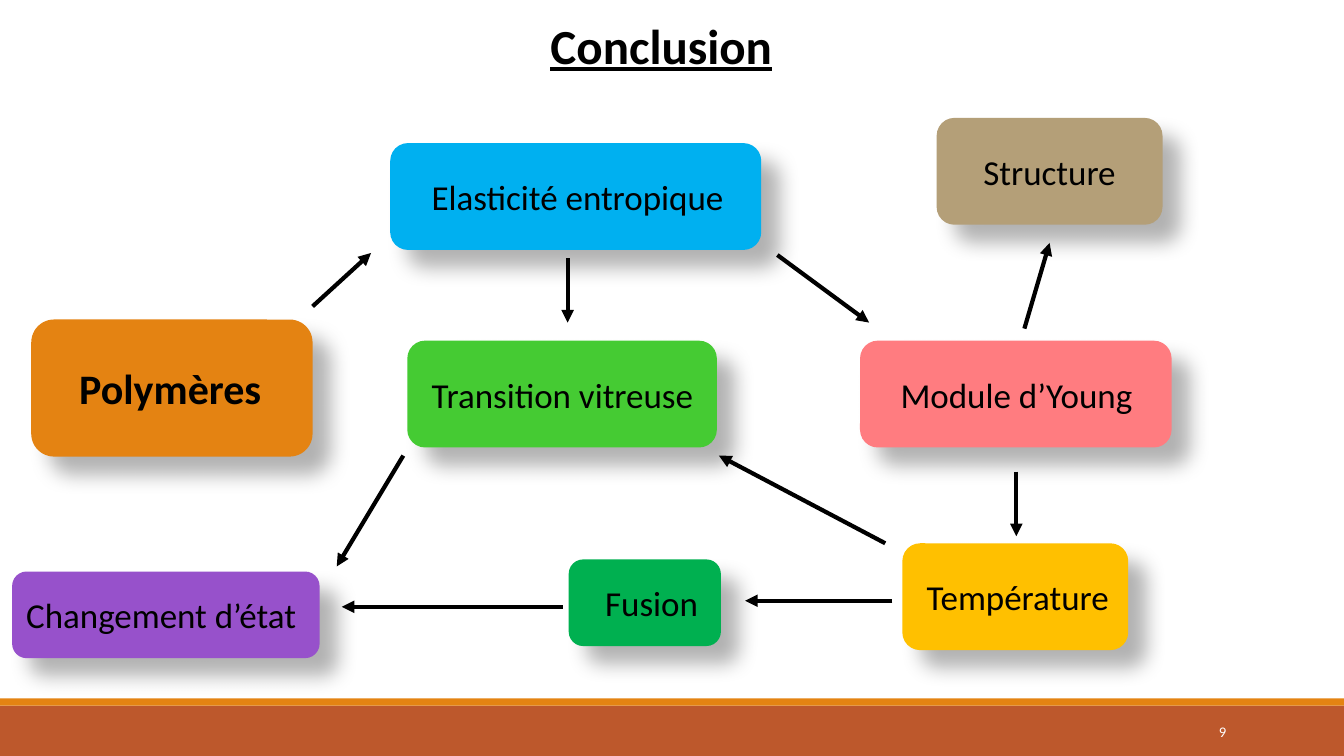
from dataclasses import dataclass

from lxml.etree import SubElement
from pptx import Presentation
from pptx.dml.color import RGBColor
from pptx.enum.shapes import MSO_CONNECTOR, MSO_SHAPE
from pptx.enum.text import MSO_ANCHOR, PP_ALIGN
from pptx.oxml import parse_xml
from pptx.oxml.ns import nsdecls, qn
from pptx.util import Inches, Pt


@dataclass(frozen=True)
class Theme:
    """Colours, font and type sizes of the slide."""
    font: str = "Calibri"
    ink: str = "000000"
    paper: str = "FFFFFF"
    orange: str = "E48312"
    rust: str = "BD582C"
    blue: str = "00B0F0"
    lime: str = "45CB33"
    pink: str = "FF7C80"
    amber: str = "FFC000"
    green: str = "00B050"
    purple: str = "9751CB"
    sand: str = "B49F78"
    title_size: int = 35
    topic_size: int = 30
    concept_size: int = 25
    number_size: float = 10.5
    arrow_width: int = 3


THEME = Theme()

CONCEPTS = [
    ("Polymères", (0.31, 3.17, 2.79, 1.36), THEME.orange, 0.41),
    ("Elasticité entropique", (3.87, 1.42, 3.68, 1.06), THEME.blue, 0.36),
    ("Transition vitreuse", (4.04, 3.38, 3.07, 1.06), THEME.lime, 0.19),
    ("Module d’Young", (8.53, 3.38, 3.09, 1.06), THEME.pink, 0.35),
    ("Température", (8.95, 5.39, 2.24, 1.06), THEME.amber, 0.19),
    ("Fusion", (5.64, 5.55, 1.51, 0.86), THEME.green, 0.32),
    ("Changement d’état", (0.12, 5.67, 3.05, 0.86), THEME.purple, 0.1),
    ("Structure", (9.29, 1.17, 2.24, 1.06), THEME.sand, None),
]

ARROWS = [
    ((3.1, 3.04), (3.68, 2.51)),
    ((5.63, 2.56), (5.63, 3.2)),
    ((7.71, 2.53), (8.62, 3.2)),
    ((10.08, 4.68), (10.08, 5.32)),
    ((8.78, 5.39), (7.13, 4.52)),
    ((8.85, 5.96), (7.39, 5.96)),
    ((5.58, 6.02), (3.39, 6.02)),
    ((4, 4.52), (3.34, 5.62)),
    ((10.16, 3.26), (10.41, 2.41)),
]


def style_text(paragraph, size, color=THEME.ink, bold=False, align=PP_ALIGN.LEFT):
    """Set the font and alignment of a paragraph."""
    paragraph.alignment = align
    font = paragraph.font
    font.name = THEME.font
    font.size = Pt(size)
    font.bold = bold
    font.color.rgb = RGBColor.from_string(color)


def add_block(slide, kind, box, color):
    """Add a filled shape without outline or shadow."""
    shape = slide.shapes.add_shape(kind, *map(Inches, box))
    shape.fill.solid()
    shape.fill.fore_color.rgb = RGBColor.from_string(color)
    shape.line.fill.background()
    shape.shadow.inherit = False
    return shape


def add_soft_shadow(shape):
    """Cast a blurred shadow down and to the right of a shape."""
    effects = shape.element.spPr.find(qn("a:effectLst"))
    effects.append(parse_xml(
        f'<a:outerShdw {nsdecls("a")} blurRad="{Pt(15)}" dist="{Pt(18)}" '
        f'dir="{45 * 60000}" algn="tl" rotWithShape="0">'
        f'<a:srgbClr val="{THEME.ink}"><a:alpha val="30000"/></a:srgbClr>'
        '</a:outerShdw>'))


def add_title(slide, box):
    """Place the underlined slide title."""
    title = slide.shapes.title
    title.left, title.top, title.width, title.height = map(Inches, box)
    title.text_frame.text = "Conclusion"
    title.text_frame.vertical_anchor = MSO_ANCHOR.TOP
    paragraph = title.text_frame.paragraphs[0]
    style_text(paragraph, THEME.title_size, bold=True)
    paragraph.font.underline = True


def add_concept(slide, label, box, color, indent):
    """Add a labelled rounded box, centred when it has no indent."""
    shape = add_block(slide, MSO_SHAPE.ROUNDED_RECTANGLE, box, color)
    add_soft_shadow(shape)
    frame = shape.text_frame
    frame.word_wrap = True
    frame.vertical_anchor = MSO_ANCHOR.MIDDLE
    frame.text = label
    is_topic = label == "Polymères"
    size = THEME.topic_size if is_topic else THEME.concept_size
    align = PP_ALIGN.CENTER if indent is None else PP_ALIGN.LEFT
    if indent is not None:
        frame.margin_left, frame.margin_right = Inches(indent), 0
    style_text(frame.paragraphs[0], size, bold=is_topic, align=align)


def add_arrow(slide, start, end):
    """Draw a straight arrow from start to end."""
    arrow = slide.shapes.add_connector(
        MSO_CONNECTOR.STRAIGHT, *map(Inches, start + end))
    arrow.line.color.rgb = RGBColor.from_string(THEME.ink)
    arrow.line.width = Pt(THEME.arrow_width)
    SubElement(arrow.line._get_or_add_ln(), qn("a:tailEnd"), type="triangle")
    SubElement(arrow._element.spPr, qn("a:effectLst"))


def add_footer(slide, box):
    """Draw the two-tone footer band with the slide number."""
    left, top, width, height = box
    stripe = 0.07
    add_block(slide, MSO_SHAPE.RECTANGLE,
              (left, top + stripe, width, height - stripe), THEME.rust)
    add_block(slide, MSO_SHAPE.RECTANGLE, (left, top, width, stripe), THEME.orange)
    number = slide.shapes.add_textbox(
        *map(Inches, (left + width - 2.5, top + 0.13, 1.43, 0.4)))
    frame = number.text_frame
    frame.word_wrap = True
    frame.vertical_anchor = MSO_ANCHOR.MIDDLE
    frame.text = "9"
    style_text(frame.paragraphs[0], THEME.number_size, THEME.paper,
               align=PP_ALIGN.RIGHT)


def add_concept_map(slide):
    """Add the concept boxes and the arrows that link them."""
    for concept in CONCEPTS:
        add_concept(slide, *concept)
    for start, end in ARROWS:
        add_arrow(slide, start, end)


def main():
    """Build and save the presentation."""
    presentation = Presentation()
    presentation.slide_width = Inches(13.33)
    presentation.slide_height = Inches(7.5)
    slide = presentation.slides.add_slide(presentation.slide_layouts[5])
    add_footer(slide, (0, 6.93, 13.33, 0.57))
    add_title(slide, (5.36, 0.1, 4.06, 0.69))
    add_concept_map(slide)
    presentation.save("out.pptx")


if __name__ == "__main__":
    main()
